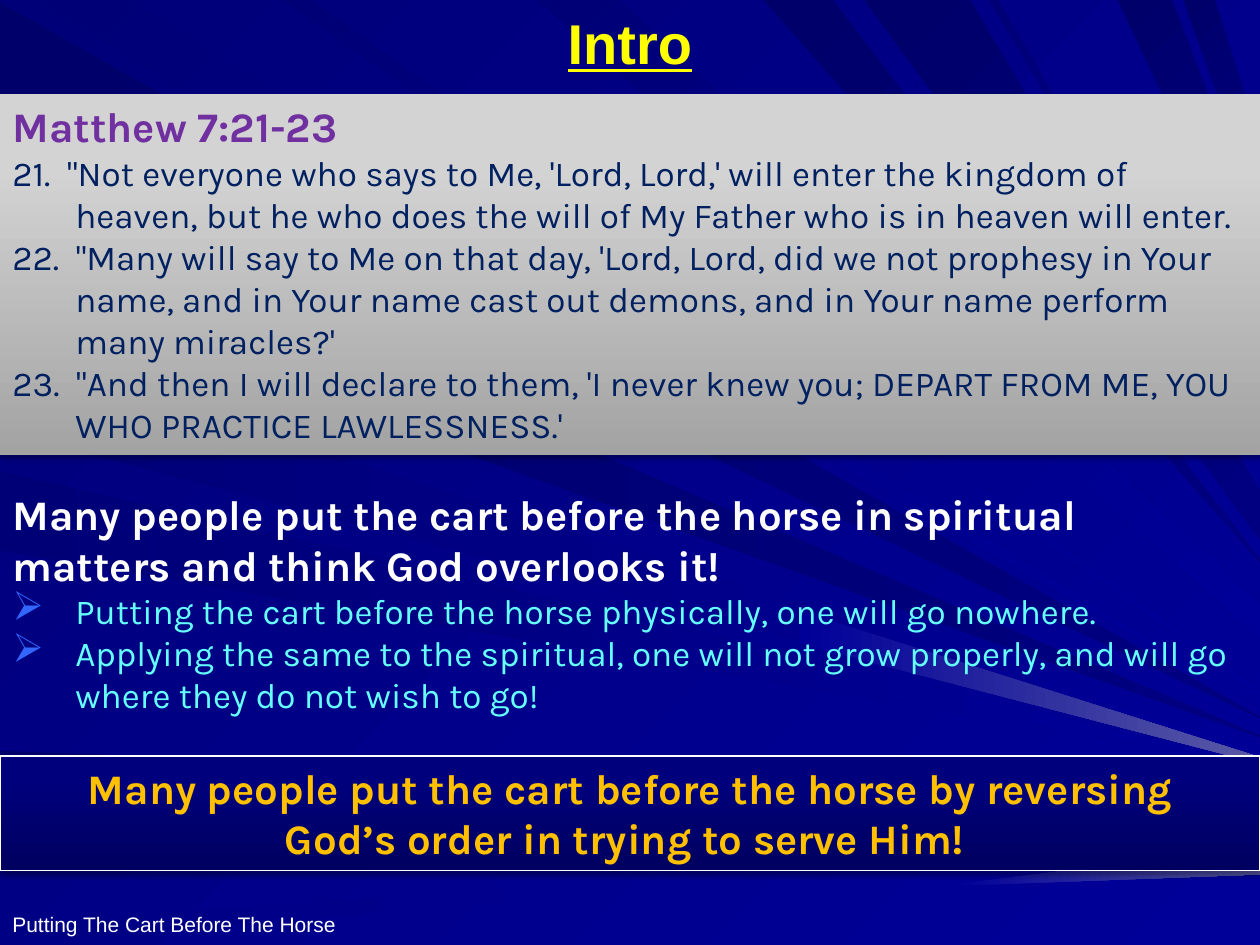
from dataclasses import dataclass
from typing import NamedTuple, Optional

import pptx
import pptx.util
import pptx.dml.color
import pptx.enum.shapes
import pptx.enum.text
import pptx.oxml
import pptx.oxml.ns

ALIGN = pptx.enum.text.PP_ALIGN
ANCHOR = pptx.enum.text.MSO_ANCHOR
CELL = 9144  # the grid has 1000 columns and 750 rows
COLS, ROWS = 1000, 750


@dataclass(frozen=True)
class Theme:
    head: str = "Arial"
    body: str = "Karla"
    title: int = 32
    large: int = 24
    small: int = 20
    foot: int = 12
    white: str = "FFFFFF"
    yellow: str = "FFFF00"
    gold: str = "FFC000"
    aqua: str = "66FFFF"
    purple: str = "7030A0"
    navy: str = "002060"
    bullet: str = "3366FF"
    back: tuple = ("000078", "000099")
    dark: tuple = ("000060", "00007C")
    grey: tuple = ("A3A3A3", "D3D3D3")
    deep: tuple = ("00006B", "000080")
    mid: tuple = ("000076", "000099")
    soft: tuple = ("000085", "000099")
    glow: tuple = ("000099", "5A5AA6")


T = Theme()


class Ray(NamedTuple):
    """A sliver from a span (near) to a span of rows on the right edge (far)."""
    near: tuple
    far: tuple
    tone: tuple
    left: int = 0


class Line(NamedTuple):
    text: str
    size: int
    color: str
    font: str = T.body
    bold: bool = False
    under: bool = False
    hang: bool = True
    mark: bool = False
    align: ALIGN = ALIGN.LEFT


class Panel(NamedTuple):
    row: int
    rows: int
    lines: list
    anchor: ANCHOR = ANCHOR.TOP
    fill: Optional[tuple] = None
    edge: Optional[str] = None
    grow: bool = False


# Rays whose near span is a run of rows
SIDE = [
    Ray((2, 93), (569, 570), T.deep),
    Ray((596, 623), (631, 632), T.deep),
    Ray((665, 704), (643, 651), T.soft),
    Ray((735, 750), (661, 662), T.soft),
    Ray((702, 703), (672, 694), T.glow, 756),
    Ray((159, 228), (584, 585), T.deep),
    Ray((278, 342), (596, 602), T.mid),
    Ray((374, 437), (605, 606), T.mid),
    Ray((485, 511), (601, 606), T.glow, 635),
]
# Rays whose near span is a run of columns on the top edge
TOP = [
    Ray((26, 101), (562, 563), T.mid),
    Ray((225, 247), (547, 552), T.mid),
    Ray((426, 492), (479, 507), T.mid),
    Ray((606, 661), (445, 446), T.deep),
    Ray((686, 770), (390, 428), T.deep),
    Ray((785, 792), (354, 360), T.mid),
    Ray((887, 930), (183, 237), T.deep),
    Ray((939, 964), (114, 167), T.deep),
]

PANELS = [
    Panel(708, 40, [Line("Putting The Cart Before The Horse", T.foot, T.white, T.head,
                         hang=False)], ANCHOR.BOTTOM),
    Panel(0, 67, [Line("Intro", T.title, T.yellow, T.head, True, True, False,
                       align=ALIGN.CENTER)], ANCHOR.MIDDLE),
    Panel(383, 192, [
        *(Line(text, T.large, T.white, bold=True) for text in (
            "Many people put the cart before the horse in spiritual",
            "matters and think God overlooks it!")),
        *(Line(text, T.small, T.aqua, mark=True) for text in (
            "Putting the cart before the horse physically, one will go nowhere.",
            "Applying the same to the spiritual, one will not grow properly, "
            "and will go where they do not wish to go!")),
    ], grow=True),
    Panel(600, 91, [
        Line(text, T.large, T.gold, bold=True, align=ALIGN.CENTER) for text in (
            "Many people put the cart before the horse by reversing",
            "God’s order in trying to serve Him! ")
    ], fill=T.dark, edge=T.white, grow=True),
    Panel(75, 286, [
        Line("Matthew 7:21-23", T.large, T.purple, bold=True),
        *(Line(text, T.small, T.navy) for text in (
            "21.  \"Not everyone who says to Me, 'Lord, Lord,' will enter the kingdom of "
            "heaven, but he who does the will of My Father who is in heaven will enter.",
            "22.  \"Many will say to Me on that day, 'Lord, Lord, did we not prophesy in "
            "Your name, and in Your name cast out demons, and in Your name perform "
            "many miracles?'",
            "23.  \"And then I will declare to them, 'I never knew you; DEPART FROM ME, "
            "YOU WHO PRACTICE LAWLESSNESS.'")),
    ], fill=T.grey, grow=True),
]


def rgb(code: str) -> pptx.dml.color.RGBColor:
    return pptx.dml.color.RGBColor.from_string(code)


def blend(fill, tone: tuple, angle: int, stop: float = 1) -> None:
    """Fill with a gradient whose angle runs clockwise."""
    fill.gradient()
    fill.gradient_angle = (360 - angle) % 360
    for part, code, place in zip(fill.gradient_stops, tone, (0, stop)):
        part.color.rgb = rgb(code)
        part.position = place


def add_xml(parent, text: str) -> None:
    space = pptx.oxml.ns.nsdecls("a")
    parent.append(pptx.oxml.parse_xml(text.replace(" ", f" {space} ", 1)))


def draw_ray(shapes, ray: Ray, top: bool) -> None:
    low, high = ray.near
    upper, lower = ray.far
    if top:
        near = [(low, 0), (high, 0)]
    else:
        near = [(ray.left, high), (ray.left, low)]
    pen = shapes.build_freeform(*near[0], scale=CELL)
    pen.add_line_segments([near[1], (COLS, upper), (COLS, lower)], close=True)
    shape = pen.convert_to_shape()
    shape.shadow.inherit = False
    shape.line.fill.background()
    blend(shape.fill, ray.tone, 45 if top else 0)


def write(para, line: Line) -> None:
    para.text = line.text
    para.alignment = line.align
    props = para._p.get_or_add_pPr()
    if line.hang:
        props.set("marL", str(50 * CELL))
        props.set("indent", str(-50 * CELL))
    if line.mark:
        add_xml(props, f'<a:buClr ><a:srgbClr val="{T.bullet}"/></a:buClr>')
        add_xml(props, '<a:buSzPct val="115000"/>')
        add_xml(props, '<a:buChar char="➢"/>')
    font = para.font
    font.name, font.size = line.font, pptx.util.Pt(line.size)
    font.bold, font.underline = line.bold, line.under
    font.color.rgb = rgb(line.color)


def draw_panel(shapes, panel: Panel) -> None:
    area = (0, panel.row * CELL, COLS * CELL, panel.rows * CELL)
    if panel.fill:
        shape = shapes.add_shape(pptx.enum.shapes.MSO_SHAPE.RECTANGLE, *area)
        blend(shape.fill, panel.fill, 270, 0.8)
        if panel.edge:
            shape.line.color.rgb = rgb(panel.edge)
            shape.line.width = pptx.util.Pt(0.75)
        else:
            shape.line.fill.background()
        shape.shadow.inherit = False
        add_xml(shape._element.spPr.find(pptx.oxml.ns.qn("a:effectLst")),
                '<a:outerShdw blurRad="39370" dist="22860" dir="5400000" rotWithShape="0">'
                '<a:srgbClr val="000000"><a:alpha val="35000"/></a:srgbClr></a:outerShdw>')
    else:
        shape = shapes.add_textbox(*area)
    frame = shape.text_frame
    frame.word_wrap = True
    frame.vertical_anchor = panel.anchor
    if panel.grow:
        frame.auto_size = pptx.enum.text.MSO_AUTO_SIZE.SHAPE_TO_FIT_TEXT
    for spot, line in enumerate(panel.lines):
        write(frame.add_paragraph() if spot else frame.paragraphs[0], line)


def main() -> None:
    deck = pptx.Presentation()
    deck.slide_width, deck.slide_height = COLS * CELL, ROWS * CELL
    slide = deck.slides.add_slide(deck.slide_layouts[6])

    # Backdrop of light rays
    blend(slide.background.fill, T.back, 45)
    group = slide.shapes.add_group_shape()
    for rays, top in ((TOP, True), (SIDE, False)):
        for ray in rays:
            draw_ray(group.shapes, ray, top)

    # Text panels
    for panel in PANELS:
        draw_panel(slide.shapes, panel)
    deck.save("out.pptx")


if __name__ == "__main__":
    main()
